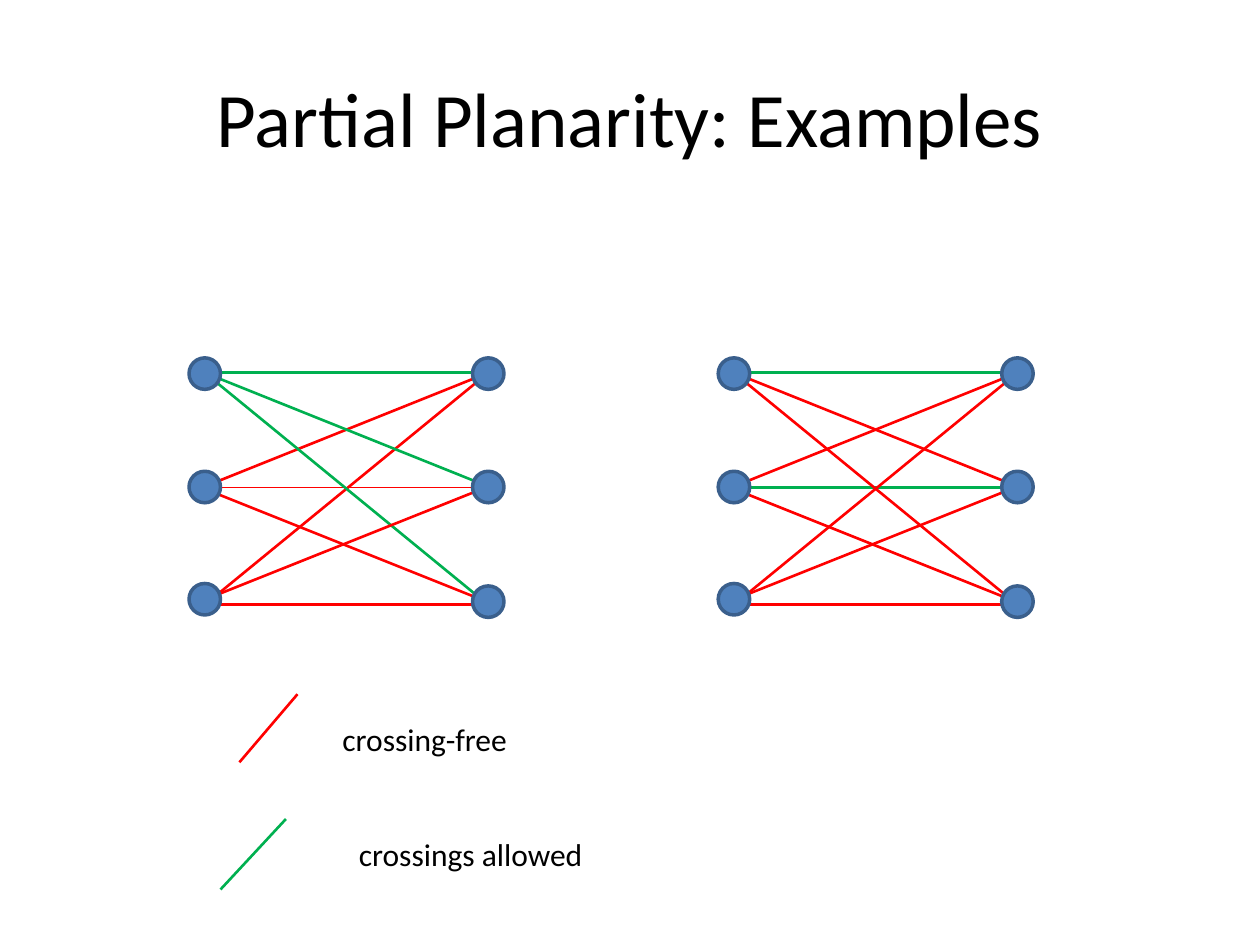
"""Build a slide with two examples of partial planarity."""
import dataclasses

import lxml.etree
import pptx
import pptx.dml.color
import pptx.enum.shapes
import pptx.enum.text
import pptx.oxml.ns
import pptx.slide
import pptx.text.text
import pptx.util

Pt = pptx.util.Pt
HUES = {"free": "FF0000", "cross": "00B050", "node": "4F81BD", "rim": "3A5F8C", "text": "000000"}
FONT = "Calibri"
NODE = 18
SPAN = 162


@dataclasses.dataclass
class Edge:
    start: float
    end: float
    hue: str
    width: float = 1.5


@dataclasses.dataclass
class Graph:
    left: float
    edges: list[Edge]


@dataclasses.dataclass
class Key:
    hue: str
    line: tuple[float, float, float, float]
    box: tuple[float, float, float, float]
    label: str


ROUTES = [(213, 213), (278.6, 278.6), (345.6, 345.6), (278, 213), (345.6, 213),
          (213, 278), (213, 345.6), (342.7, 278), (279.4, 344.2)]
TOPS = [(204.5, 204.5), (269.3, 269.3), (333.4, 334.8)]


def make_edges(cross: set[int], thin: set[int]) -> list[Edge]:
    """Colour the routes, with those in cross allowed to cross."""
    return [Edge(start, end, "cross" if i in cross else "free", 0.75 if i in thin else 1.5)
            for i, (start, end) in enumerate(ROUTES)]


GRAPHS = [Graph(108, make_edges({0, 5, 6}, {1})),
          Graph(410.4, make_edges({0, 1}, set()))]
KEYS = [Key("free", (170, 396.7, 136.8, 435.6), (188.6, 408.2, 109.4, 28.8), "crossing-free"),
        Key("cross", (163.4, 468, 126, 508.3), (198, 473.8, 144, 28.8), "crossings allowed")]


def get_hue(name: str) -> pptx.dml.color.RGBColor:
    """Look up a colour by its name."""
    return pptx.dml.color.RGBColor.from_string(HUES[name])


def draw_line(slide: pptx.slide.Slide, ends: tuple[float, float, float, float],
              hue: str, width: float = 1.5) -> None:
    """Draw a straight line without a shadow."""
    line = slide.shapes.add_connector(
        pptx.enum.shapes.MSO_CONNECTOR.STRAIGHT, *(Pt(v) for v in ends))
    line.line.color.rgb = get_hue(hue)
    line.line.width = Pt(width)
    lxml.etree.SubElement(line._element.spPr, pptx.oxml.ns.qn("a:effectLst"))


def draw_node(slide: pptx.slide.Slide, left: float, top: float) -> None:
    """Draw one round node of a graph."""
    node = slide.shapes.add_shape(
        pptx.enum.shapes.MSO_SHAPE.OVAL, Pt(left), Pt(top), Pt(NODE), Pt(NODE))
    node.shadow.inherit = False
    node.fill.solid()
    node.fill.fore_color.rgb = get_hue("node")
    node.line.color.rgb = get_hue("rim")
    node.line.width = Pt(2)


def draw_graph(slide: pptx.slide.Slide, graph: Graph) -> None:
    """Draw the edges of a graph, then its nodes on top."""
    start = graph.left + NODE / 2
    for edge in graph.edges:
        draw_line(slide, (start, edge.start, start + SPAN, edge.end), edge.hue, edge.width)
    for pair in TOPS:
        for side, top in enumerate(pair):
            draw_node(slide, graph.left + side * SPAN, top)


def set_text(frame: pptx.text.text.TextFrame, text: str, size: float) -> None:
    """Fill a frame with text and format its run."""
    frame.text = text
    font = frame.paragraphs[0].runs[0].font
    font.name = FONT
    font.size = Pt(size)
    font.color.rgb = get_hue("text")


def draw_key(slide: pptx.slide.Slide, key: Key) -> None:
    """Draw a sample line and its label."""
    draw_line(slide, key.line, key.hue)
    frame = slide.shapes.add_textbox(*(Pt(v) for v in key.box)).text_frame
    frame.word_wrap = False
    frame.auto_size = pptx.enum.text.MSO_AUTO_SIZE.SHAPE_TO_FIT_TEXT
    set_text(frame, key.label, 18)


def draw_title(slide: pptx.slide.Slide, text: str) -> None:
    """Place and format the title."""
    title = slide.shapes.title
    title.left, title.top, title.width, title.height = Pt(36), Pt(21.6), Pt(648), Pt(90)
    title.text_frame.vertical_anchor = pptx.enum.text.MSO_ANCHOR.MIDDLE
    set_text(title.text_frame, text, 44)
    title.text_frame.paragraphs[0].alignment = pptx.enum.text.PP_ALIGN.CENTER


def main() -> None:
    """Build and save the slide."""
    deck = pptx.Presentation()
    deck.slide_width, deck.slide_height = Pt(720), Pt(540)
    slide = deck.slides.add_slide(deck.slide_layouts[5])
    draw_title(slide, "Partial Planarity: Examples")
    for graph in GRAPHS:
        draw_graph(slide, graph)
    for key in KEYS:
        draw_key(slide, key)
    deck.save("out.pptx")


if __name__ == "__main__":
    main()
